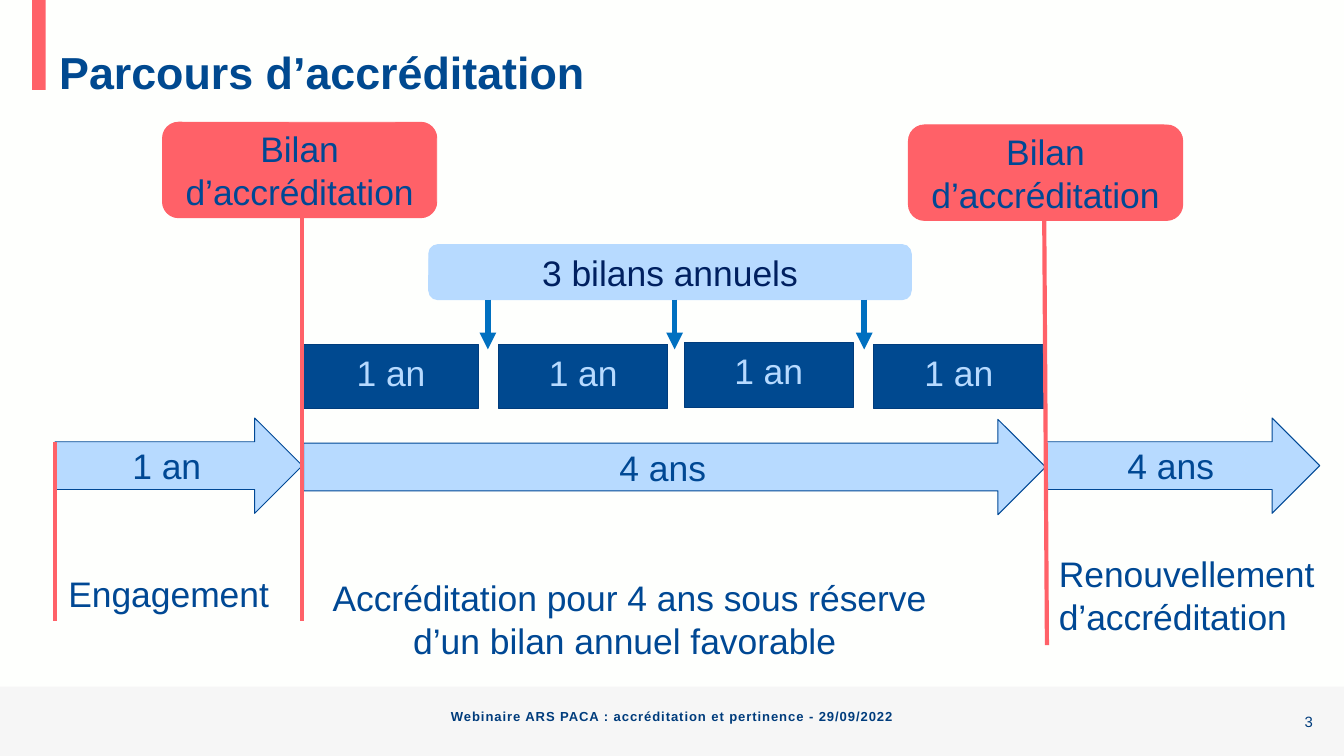
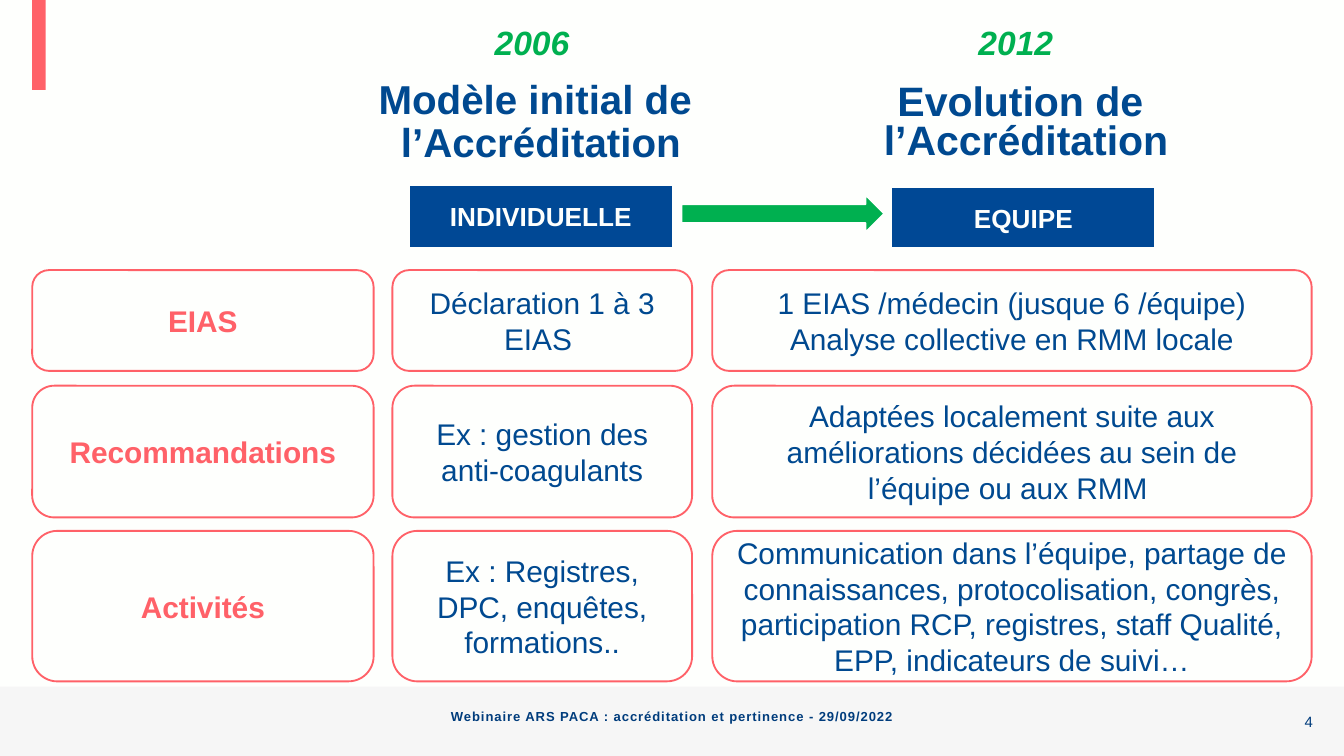
"""Build two slides on the accreditation pathway and its evolution."""
from copy import deepcopy
from itertools import product
from typing import NamedTuple, Optional

from lxml.etree import SubElement
from pptx import Presentation
from pptx.dml.color import RGBColor
from pptx.enum.shapes import MSO_CONNECTOR, MSO_SHAPE as Preset
from pptx.enum.text import MSO_ANCHOR as Anchor, MSO_AUTO_SIZE, PP_ALIGN as Align
from pptx.oxml.ns import qn
from pptx.util import Pt

PX = 9144
SLIDE_WIDTH = 1000 * PX
SLIDE_HEIGHT = SLIDE_WIDTH * 9 // 16
FONT = "Arial"
PAPER = RGBColor(0xFE, 0xFF, 0xFD)
BAND_GREY = RGBColor(0xF6, 0xF6, 0xF6)
CORAL = RGBColor(0xFF, 0x61, 0x68)
BLUE = RGBColor(0x00, 0x49, 0x90)
MID_BLUE = RGBColor(0x00, 0x48, 0x95)
TEXT_BLUE = RGBColor(0x00, 0x48, 0x94)
DARK_BLUE = RGBColor(0x00, 0x3C, 0x7C)
NAVY = RGBColor(0x00, 0x20, 0x60)
ARROW_BLUE = RGBColor(0x00, 0x70, 0xC0)
PALE_BLUE = RGBColor(0xB7, 0xDA, 0xFF)
GREEN = RGBColor(0x00, 0xB0, 0x50)

FOOTER = "Webinaire ARS PACA : accréditation et pertinence - 29/09/2022"
TITLE_INSETS = (20, 10, 0, 0)
NO_INSETS = (0, 0, 0, 0)


class Box(NamedTuple):
    left: int
    top: int
    width: int
    height: int

    def lengths(self) -> list[int]:
        return [value * PX for value in self]


class Span(NamedTuple):
    start: int
    size: int


class Step(NamedTuple):
    box: Box
    text: str


class Marker(NamedTuple):
    start: tuple[int, int]
    end: tuple[int, int]


def write(shape, text: str, *, size: float, color: RGBColor, bold=False, italic=False,
          align=Align.CENTER, anchor=Anchor.MIDDLE, insets=(10, 5, 10, 5),
          line_spacing=None, tracking: int = 0) -> None:
    frame = shape.text_frame
    frame.word_wrap = True
    frame.auto_size = MSO_AUTO_SIZE.NONE
    frame.vertical_anchor = anchor
    frame.margin_left, frame.margin_top, frame.margin_right, frame.margin_bottom = (
        inset * PX for inset in insets)
    frame.text = text
    for paragraph in frame.paragraphs:
        paragraph.alignment = align
        if line_spacing is not None:
            paragraph.line_spacing = line_spacing
        for run in paragraph.runs:
            font = run.font
            font.name, font.size = FONT, Pt(size)
            font.bold, font.italic = bold, italic
            font.color.rgb = color
    if tracking:
        for properties in shape.element.iter(qn("a:rPr")):
            properties.set("spc", str(tracking))
    for line_break in shape.element.iter(qn("a:br")):
        line_break.append(deepcopy(line_break.getprevious().find(qn("a:rPr"))))


def add_text(slide, box: Box, text: str, **style):
    shape = slide.shapes.add_textbox(*box.lengths())
    write(shape, text, **style)
    return shape


def add_block(slide, preset, box: Box, fill: Optional[RGBColor] = None,
              line: Optional[RGBColor] = None, line_width: float = 0.5):
    shape = slide.shapes.add_shape(preset, *box.lengths())
    shape.shadow.inherit = False
    if fill is None:
        shape.fill.background()
    else:
        shape.fill.solid()
        shape.fill.fore_color.rgb = fill
    if line is None:
        shape.line.fill.background()
    else:
        shape.line.color.rgb = line
        shape.line.width = Pt(line_width)
    return shape


def add_line(slide, marker: Marker, color: RGBColor, width: float, arrow=False) -> None:
    points = [value * PX for value in marker.start + marker.end]
    connector = slide.shapes.add_connector(MSO_CONNECTOR.STRAIGHT, *points)
    connector.line.color.rgb = color
    connector.line.width = Pt(width)
    properties = connector.element.spPr
    if arrow:
        SubElement(properties.find(qn("a:ln")), qn("a:tailEnd"), type="triangle")
    SubElement(properties, qn("a:effectLst"))


def decorate_layout(slide) -> None:
    tree = slide.slide_layout.element.cSld.spTree
    for box, color in ((Box(0, 511, 1000, 52), BAND_GREY), (Box(24, 0, 10, 67), CORAL)):
        tree.append(add_block(slide, Preset.RECTANGLE, box, color).element)


def set_title(slide, box: Box, text: str, size: float, align) -> None:
    title = slide.shapes.title
    title.left, title.top, title.width, title.height = box.lengths()
    write(title, text, size=size, color=BLUE, bold=True, align=align,
          anchor=Anchor.TOP, insets=TITLE_INSETS, line_spacing=0.9)


def add_footer(slide, number: int) -> None:
    add_text(slide, Box(185, 517, 630, 22), FOOTER, size=7, color=DARK_BLUE, bold=True,
             anchor=Anchor.BOTTOM, insets=NO_INSETS, line_spacing=Pt(8), tracking=50)
    add_text(slide, Box(839, 510, 138, 54), str(number), size=8, color=DARK_BLUE,
             align=Align.RIGHT, insets=NO_INSETS)


def build_pathway(slide) -> None:
    set_title(slide, Box(24, 28, 953, 63), "Parcours d’accréditation", 24, Align.LEFT)
    add_footer(slide, 3)

    for box in (Box(226, 256, 130, 48), Box(371, 256, 126, 48),
                Box(509, 255, 126, 48), Box(650, 256, 127, 48)):
        year = add_block(slide, Preset.RECTANGLE, box, BLUE, DARK_BLUE)
        write(year, "1 an", size=19, color=PALE_BLUE, anchor=Anchor.TOP)

    for box, text in (Step(Box(41, 311, 184, 71), "1 an"),
                      Step(Box(226, 312, 552, 71), "4 ans"),
                      Step(Box(778, 311, 204, 71), "4 ans")):
        period = add_block(slide, Preset.RIGHT_ARROW, box, PALE_BLUE, MID_BLUE)
        write(period, text, size=19, color=TEXT_BLUE)

    captions = (
        (Step(Box(31, 421, 189, 44), "Engagement"), Align.CENTER),
        (Step(Box(210, 424, 517, 74),
              "Accréditation pour 4 ans sous réserve d’un bilan annuel favorable "), Align.CENTER),
        (Step(Box(778, 406, 224, 74), "Renouvellement d’accréditation"), Align.LEFT),
    )
    for (box, text), align in captions:
        add_text(slide, box, text, size=19, color=TEXT_BLUE, align=align, anchor=Anchor.TOP)

    for box in (Box(676, 93, 204, 71), Box(121, 91, 204, 71)):
        review = add_block(slide, Preset.ROUNDED_RECTANGLE, box, CORAL, CORAL)
        write(review, "Bilan d’accréditation", size=19, color=TEXT_BLUE)

    for milestone in (Marker((41, 462), (41, 329)), Marker((225, 462), (225, 155)),
                      Marker((779, 480), (777, 164))):
        add_line(slide, milestone, CORAL, 2.25)

    annual = add_block(slide, Preset.ROUNDED_RECTANGLE, Box(319, 182, 359, 41),
                       PALE_BLUE, PALE_BLUE)
    write(annual, "3 bilans annuels", size=19, color=NAVY)
    for x in (363, 502, 643):
        add_line(slide, Marker((x, 223), (x, 260)), ARROW_BLUE, 3, arrow=True)


def build_evolution(slide) -> None:
    set_title(slide, Box(254, 49, 277, 63), "Modèle initial de \vl’Accréditation",
              21.6, Align.CENTER)
    add_text(slide, Box(633, 53, 241, 75), "Evolution de \nl’Accréditation", size=22,
             color=BLUE, bold=True, anchor=Anchor.TOP, insets=TITLE_INSETS, line_spacing=0.8)
    add_footer(slide, 4)

    for box, text in (Step(Box(368, 16, 132, 49), "2006"), Step(Box(728, 16, 132, 49), "2012")):
        add_text(slide, box, text, size=18, color=GREEN, bold=True, italic=True,
                 align=Align.LEFT, anchor=Anchor.TOP, insets=NO_INSETS)

    for box, text in (Step(Box(304, 137, 197, 48), "INDIVIDUELLE"),
                      Step(Box(663, 139, 197, 46), "EQUIPE")):
        scope = add_block(slide, Preset.RECTANGLE, box, MID_BLUE, PAPER, 1.5)
        write(scope, text, size=14, color=PAPER, bold=True)
    add_block(slide, Preset.RIGHT_ARROW, Box(507, 145, 151, 28), GREEN, PAPER, 1)

    columns = (Span(24, 254), Span(292, 223), Span(530, 446))
    rows = (Span(201, 75), Span(287, 98), Span(395, 112))
    texts = (
        "EIAS",
        "Déclaration 1 à 3 EIAS ",
        "1 EIAS /médecin (jusque 6 /équipe)\nAnalyse collective en RMM locale",
        "Recommandations",
        "Ex : gestion des anti-coagulants",
        "Adaptées localement suite aux améliorations décidées au sein de l’équipe ou aux RMM ",
        "Activités",
        "Ex : Registres, DPC, enquêtes, formations..",
        "Communication dans l’équipe, partage de connaissances, protocolisation, congrès, "
        "participation RCP, registres, staff Qualité, EPP, indicateurs de suivi…",
    )
    for (row, column), text in zip(product(rows, columns), texts):
        box = Box(column.start, row.start, column.size, row.size)
        cell = add_block(slide, Preset.ROUNDED_RECTANGLE, box, line=CORAL, line_width=1)
        heading = column == columns[0]
        write(cell, text, size=16, color=CORAL if heading else BLUE, bold=heading)


def main() -> None:
    presentation = Presentation()
    presentation.slide_width, presentation.slide_height = SLIDE_WIDTH, SLIDE_HEIGHT
    background = presentation.slide_master.background.fill
    background.solid()
    background.fore_color.rgb = PAPER
    layout = presentation.slide_layouts.get_by_name("Title Only")
    pathway, evolution = (presentation.slides.add_slide(layout) for _ in range(2))
    decorate_layout(pathway)
    build_pathway(pathway)
    build_evolution(evolution)
    presentation.save("out.pptx")


if __name__ == "__main__":
    main()
